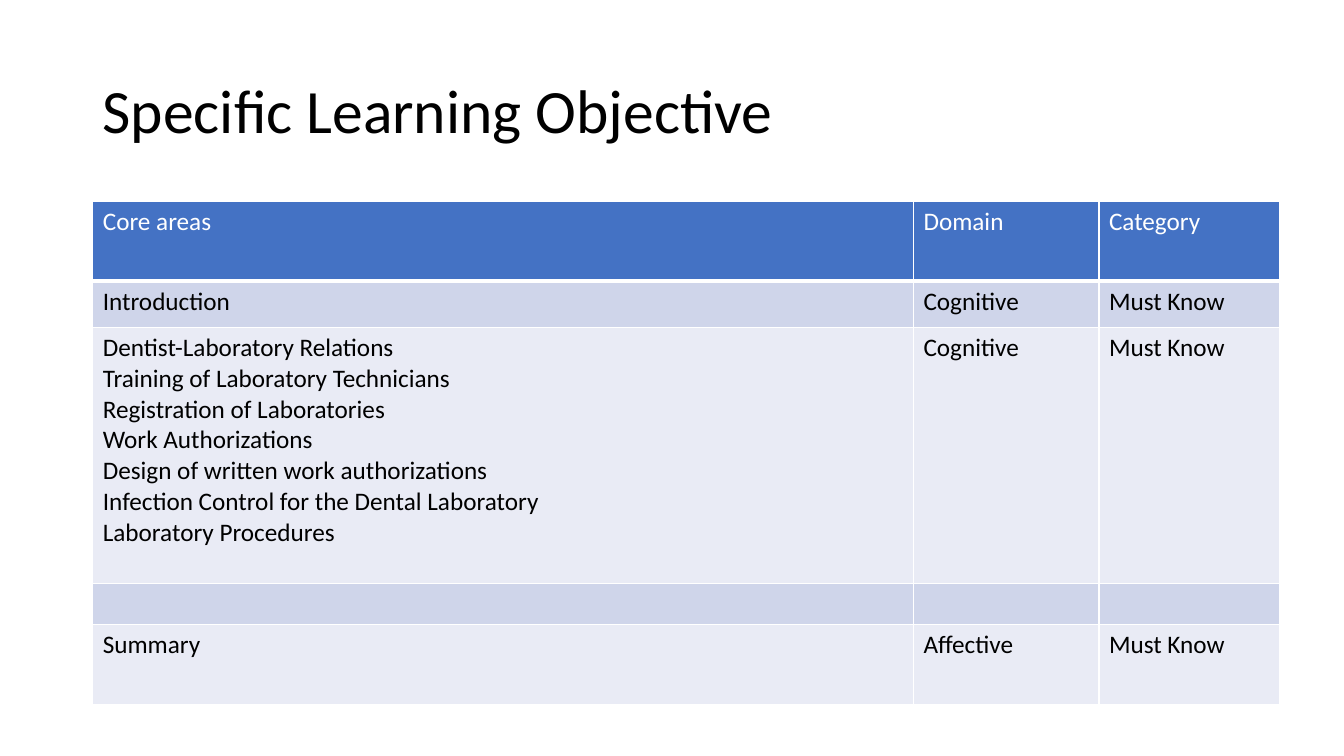
from dataclasses import dataclass

from lxml.etree import SubElement
from pptx import Presentation
from pptx.dml.color import RGBColor
from pptx.enum.text import MSO_ANCHOR
from pptx.oxml.ns import qn
from pptx.util import Inches, Pt

# Content
TITLE = "Specific Learning Objective"
HEADINGS = ["Core areas", "Domain", "Category"]
LABORATORY_TOPICS = [
    "Dentist-Laboratory Relations",
    "Training of Laboratory Technicians",
    "Registration of Laboratories",
    "Work Authorizations",
    "Design of written work authorizations",
    "Infection Control for the Dental Laboratory",
    "Laboratory Procedures",
]
OBJECTIVES = [
    ["Introduction", "Cognitive", "Must Know"],
    ["\n".join(LABORATORY_TOPICS), "Cognitive", "Must Know"],
    ["", "", ""],
    ["Summary", "Affective", "Must Know"],
]

# Layout in inches
SLIDE_WIDTH, SLIDE_HEIGHT = 13.33, 7.5
LEFT = 0.92
TITLE_TOP, TITLE_HEIGHT = 0.4, 1.45
TABLE_TOP = 2
COLUMN_WIDTHS = [8.14, 1.84, 1.79]
ROW_HEIGHTS = [0.79, 0.46, 2.54, 0.41, 0.79]


@dataclass(frozen=True)
class Theme:
    font: str = "Calibri"
    title_size: int = 44
    table_size: int = 18
    ink: str = "000000"
    white: str = "FFFFFF"
    header: str = "4472C4"
    bands: tuple = ("CFD5EA", "E9EBF5")
    rule: float = 1
    header_rule: float = 3


THEME = Theme()


def write(frame, text, size, color, line_spacing=1.0):
    frame.word_wrap = True
    frame.text = text
    for paragraph in frame.paragraphs:
        paragraph.line_spacing = line_spacing
        for run in paragraph.runs:
            run.font.name = THEME.font
            run.font.size = Pt(size)
            run.font.bold = False
            run.font.color.rgb = RGBColor.from_string(color)


def add_borders(cell, bottom):
    properties = cell._tc.get_or_add_tcPr()
    widths = {"L": THEME.rule, "R": THEME.rule, "T": THEME.rule, "B": bottom}
    for side, width in widths.items():
        line = SubElement(properties, qn(f"a:ln{side}"), w=str(Pt(width)))
        fill = SubElement(line, qn("a:solidFill"))
        SubElement(fill, qn("a:srgbClr"), val=THEME.white)


def add_title(slide):
    box = slide.shapes.add_textbox(
        Inches(LEFT), Inches(TITLE_TOP),
        Inches(SLIDE_WIDTH - 2 * LEFT), Inches(TITLE_HEIGHT))
    box.text_frame.vertical_anchor = MSO_ANCHOR.MIDDLE
    write(box.text_frame, TITLE, THEME.title_size, THEME.ink, line_spacing=0.9)


def add_objectives(slide):
    rows = [HEADINGS] + OBJECTIVES
    table = slide.shapes.add_table(
        len(rows), len(HEADINGS), Inches(LEFT), Inches(TABLE_TOP),
        Inches(sum(COLUMN_WIDTHS)), Inches(sum(ROW_HEIGHTS))).table
    table.first_row = table.horz_banding = False
    for column, width in zip(table.columns, COLUMN_WIDTHS):
        column.width = Inches(width)

    for row_index, (texts, height) in enumerate(zip(rows, ROW_HEIGHTS)):
        table.rows[row_index].height = Inches(height)
        is_header = row_index == 0
        background = THEME.header if is_header else THEME.bands[(row_index - 1) % 2]
        color = THEME.white if is_header else THEME.ink
        for column_index, text in enumerate(texts):
            cell = table.cell(row_index, column_index)
            add_borders(cell, THEME.header_rule if is_header else THEME.rule)
            cell.fill.solid()
            cell.fill.fore_color.rgb = RGBColor.from_string(background)
            write(cell.text_frame, text, THEME.table_size, color)


def main():
    deck = Presentation()
    deck.slide_width, deck.slide_height = Inches(SLIDE_WIDTH), Inches(SLIDE_HEIGHT)
    slide = deck.slides.add_slide(deck.slide_layouts[6])
    add_title(slide)
    add_objectives(slide)
    deck.save("out.pptx")


if __name__ == "__main__":
    main()
